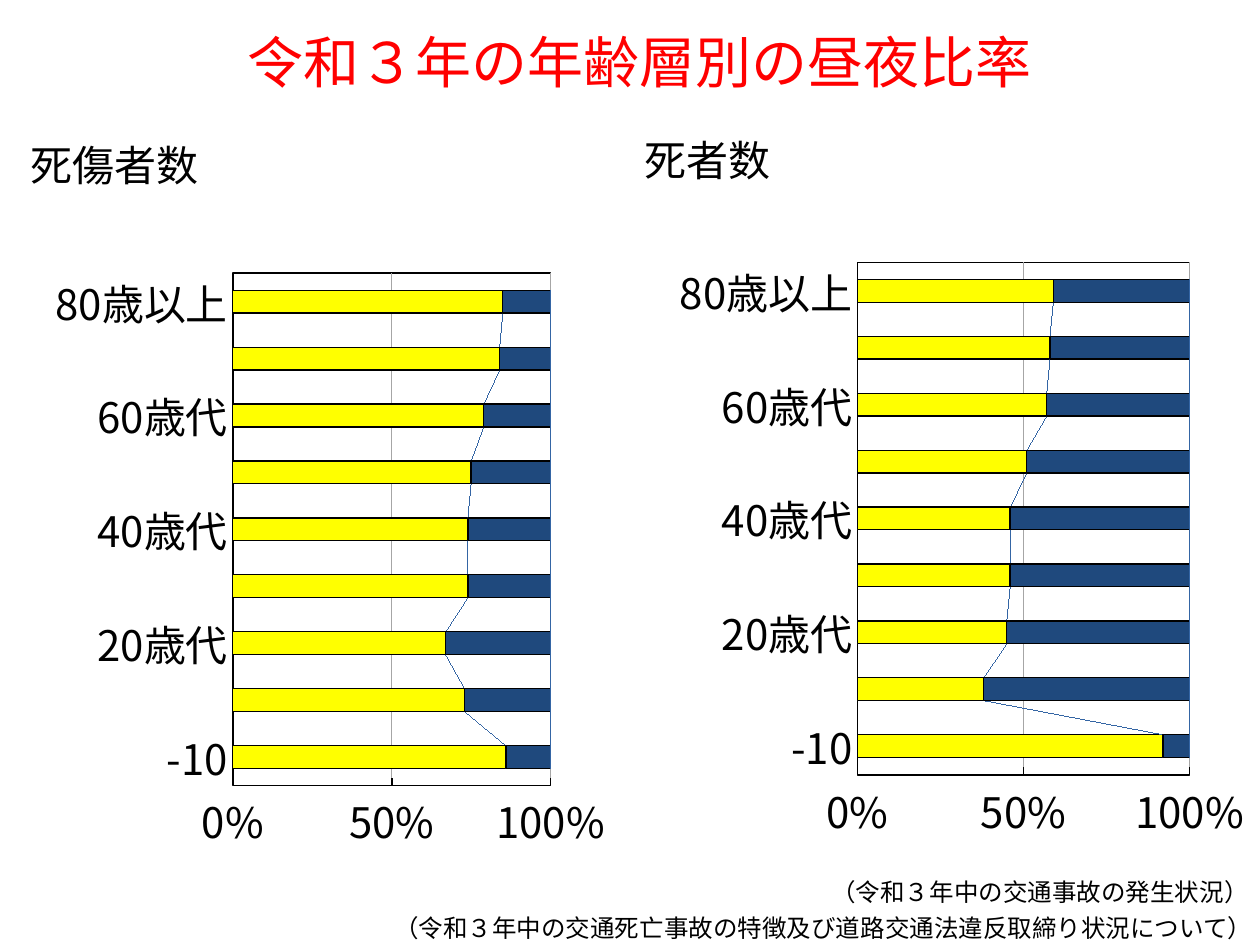
from lxml import etree
from pptx import Presentation
from pptx.chart.data import CategoryChartData
from pptx.dml.color import RGBColor
from pptx.enum import chart as charts, text
from pptx.oxml import parse_xml
from pptx.oxml.ns import nsdecls, qn
from pptx.util import Inches, Pt

FONT = "Noto Sans CJK JP"
BLACK = RGBColor(0x00, 0x00, 0x00)
RED = RGBColor(0xFF, 0x00, 0x00)
YELLOW = RGBColor(0xFF, 0xFF, 0x00)
NAVY = RGBColor(0x1F, 0x49, 0x7D)
BLUE = RGBColor(0x34, 0x65, 0xA4)
GREY = RGBColor(0xA6, 0xA6, 0xA6)

AGES = ["-10", *(f"{age}歳代" for age in range(10, 80, 10)), "80歳以上"]
INJURED_BY_DAY = [86, 73, 67, 74, 74, 75, 79, 84, 85]
KILLED_BY_DAY = [92, 38, 45, 46, 46, 51, 57, 58, 59]


def set_font(font, size, color=BLACK):
    for name, value in {"name": FONT, "size": Pt(size), "bold": False}.items():
        setattr(font, name, value)
    font.color.rgb = color


def set_line(line, color, width):
    line.color.rgb = color
    line.width = Pt(width)


def use_font_for_japanese(element):
    """Repeat each Latin typeface as the East Asian one."""
    for latin in list(element.iter(qn("a:latin"))):
        east_asian = etree.Element(qn("a:ea"), typeface=FONT)
        latin.addnext(east_asian)


def add_text(slide, box, words, size, color=BLACK, wrap=False,
             align=text.PP_ALIGN.LEFT, anchor=text.MSO_ANCHOR.TOP):
    shape = slide.shapes.add_textbox(*map(Inches, box))
    frame = shape.text_frame
    frame.word_wrap = wrap
    frame.vertical_anchor = anchor
    paragraph = frame.paragraphs[0]
    paragraph.alignment = align
    run = paragraph.add_run()
    run.text = words
    set_font(run.font, size, color)
    use_font_for_japanese(shape.element)


def line_xml(color, width):
    return (f'<c:spPr {nsdecls("c", "a")}><a:ln w="{Pt(width)}"><a:solidFill>'
            f'<a:srgbClr val="{color}"/></a:solidFill></a:ln></c:spPr>')


def place_plot(plot_area, top, height):
    """Fix the inner plot rectangle, as fractions of the chart, and frame it."""
    for layout in plot_area.findall(qn("c:layout")):
        plot_area.remove(layout)
    settings = {"layoutTarget": "inner", "xMode": "edge", "yMode": "edge",
                "x": 0.37, "y": top, "w": 0.54, "h": height}
    tags = "".join(f'<c:{tag} val="{value}"/>' for tag, value in settings.items())
    plot_area.insert(0, parse_xml(
        f'<c:layout {nsdecls("c")}><c:manualLayout>{tags}</c:manualLayout></c:layout>'))
    plot_area.append(parse_xml(line_xml(BLACK, 1)))


def add_series_lines(bar_chart):
    lines = parse_xml(f'<c:serLines {nsdecls("c")}>{line_xml(BLUE, 0.37)}</c:serLines>')
    bar_chart.find(qn("c:axId")).addprevious(lines)


def format_axes(chart):
    ages, share = chart.category_axis, chart.value_axis
    for axis, tick in ((ages, charts.XL_TICK_MARK.NONE),
                       (share, charts.XL_TICK_MARK.INSIDE)):
        axis.major_tick_mark = tick
        axis.minor_tick_mark = charts.XL_TICK_MARK.NONE
        set_font(axis.tick_labels.font, 24)
        set_line(axis.format.line, BLACK, 1)
    for name, value in {"minimum_scale": 0, "maximum_scale": 1, "major_unit": 0.5,
                        "has_major_gridlines": True}.items():
        setattr(share, name, value)
    set_line(share.major_gridlines.format.line, GREY, 0.37)
    share.tick_labels.number_format = "0%"
    share.tick_labels.number_format_is_linked = False


def add_day_night_chart(slide, box, day_shares, plot_top, plot_height):
    data = CategoryChartData()
    data.categories = AGES
    data.add_series("昼", day_shares)
    data.add_series("夜", [100 - share for share in day_shares])
    chart = slide.shapes.add_chart(
        charts.XL_CHART_TYPE.BAR_STACKED_100, *map(Inches, box), data).chart
    chart.has_title = False
    chart.has_legend = False
    set_font(chart.font, 24)
    plot = chart.plots[0]
    for name, value in {"gap_width": 150, "overlap": 100,
                        "vary_by_categories": False}.items():
        setattr(plot, name, value)
    for series, color in zip(plot.series, (YELLOW, NAVY)):
        series.format.fill.solid()
        series.format.fill.fore_color.rgb = color
        set_line(series.format.line, BLACK, 0.75)
    format_axes(chart)
    root = chart.element if hasattr(chart, "element") else chart._chartSpace
    plot_area = next(root.iter(qn("c:plotArea")))
    place_plot(plot_area, plot_top, plot_height)
    add_series_lines(plot_area.find(qn("c:barChart")))
    use_font_for_japanese(root)


def main():
    presentation = Presentation()
    presentation.slide_width = Inches(10)
    presentation.slide_height = Inches(7.5)
    slide = presentation.slides.add_slide(presentation.slide_layouts[6])

    add_text(slide, (0.75, 0.07, 8.66, 0.83), "令和３年の年齢層別の昼夜比率", 32, RED,
             wrap=True, align=text.PP_ALIGN.CENTER, anchor=text.MSO_ANCHOR.MIDDLE)
    add_text(slide, (6.5, 6.91, 3.54, 0.34), "（令和３年中の交通事故の発生状況）", 14)
    add_day_night_chart(slide, (0.12, 1.5, 4.68, 5.57), INJURED_BY_DAY, 0.12, 0.73)
    add_text(slide, (3.03, 7.2, 7.07, 0.34),
             "（令和３年中の交通死亡事故の特徴及び道路交通法違反取締り状況について）", 14)
    add_text(slide, (0.14, 1.06, 1.55, 0.5), "死傷者数", 24)
    add_day_night_chart(slide, (5, 1.47, 4.88, 5.57), KILLED_BY_DAY, 0.11, 0.73)
    add_text(slide, (5.02, 1.02, 1.21, 0.5), "死者数", 24)

    presentation.save("out.pptx")


if __name__ == "__main__":
    main()
